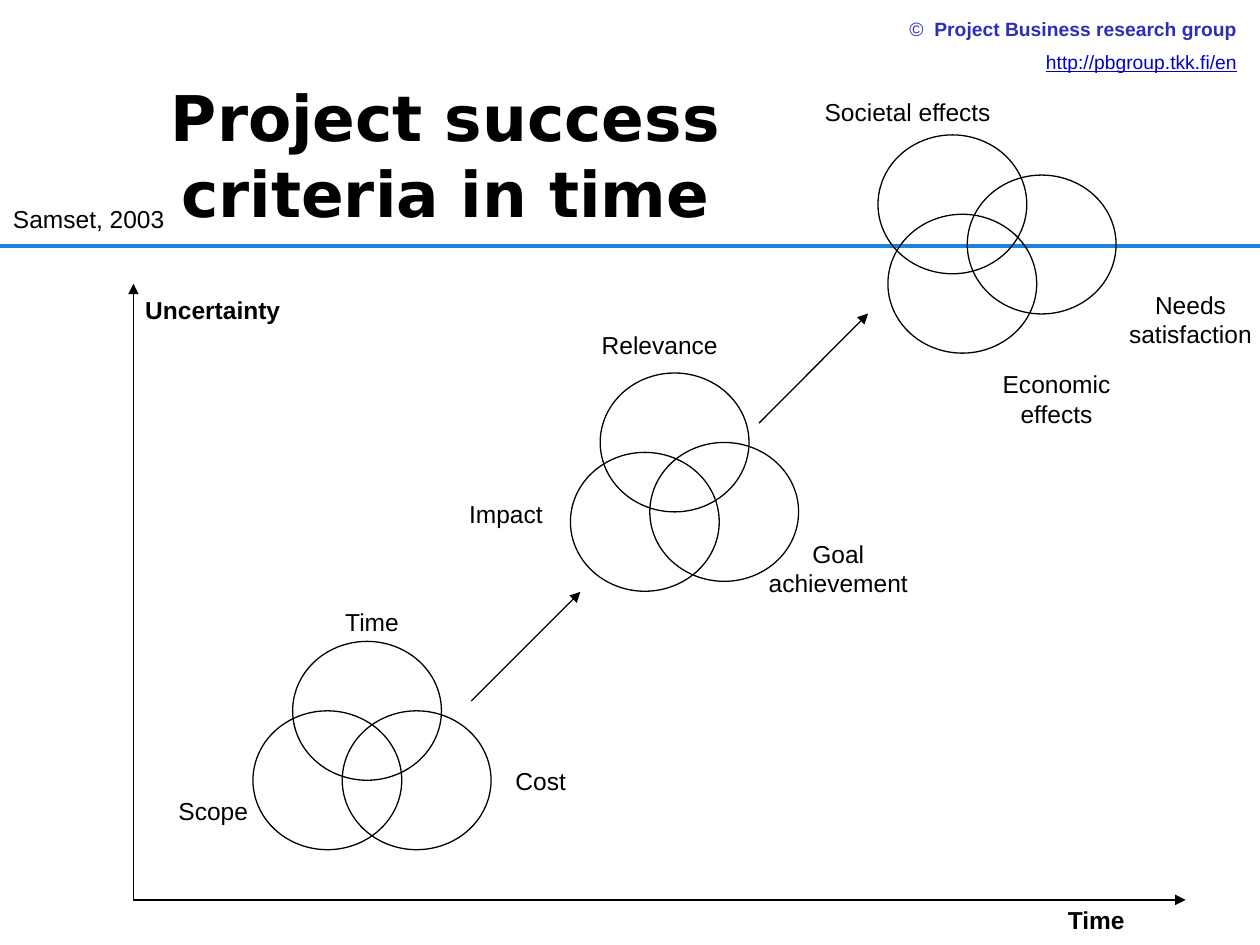
from dataclasses import dataclass

from lxml.etree import SubElement
from pptx import Presentation
from pptx.dml.color import RGBColor as RGB
from pptx.enum.shapes import MSO_CONNECTOR as CONN, MSO_SHAPE as SHAPE
from pptx.enum.text import MSO_ANCHOR as ANCHOR, MSO_AUTO_SIZE as FIT, PP_ALIGN as ALIGN
from pptx.oxml.ns import qn
from pptx.util import Cm, Pt


@dataclass(frozen=True)
class Theme:
    font: str = "Arial"
    title_font: str = "DejaVu Sans"
    ink: RGB = RGB(0x00, 0x00, 0x00)
    rule: RGB = RGB(0x1D, 0x82, 0xDD)
    credit: RGB = RGB(0x2D, 0x2D, 0xB9)
    link: RGB = RGB(0x00, 0x00, 0xCC)
    title_size: float = 36
    label_size: float = 14
    credit_size: float = 11
    thin: float = 0.75
    thick: float = 2.25


T = Theme()

# Content; all lengths in cm
SLIDE_W, SLIDE_H = 25.4, 19.05
TITLE = "Project success criteria in time"
TITLE_BOX = (1.68, 1.7, 14.6, 2.82)
CREDIT_BOX = (17.27, 0.23, 7.92, 1.42)
RULE_Y = 4.95

CIRCLE_W, CIRCLE_H = 3, 2.8
CLUSTERS = {  # left, top of each circle
    "project": [(5.1, 14.33), (5.9, 12.93), (6.9, 14.33)],
    "outcome": [(11.5, 9.12), (12.1, 7.52), (13.1, 8.92)],
    "society": [(17.7, 2.72), (17.9, 4.32), (19.5, 3.53)],
}

ORIGIN = (2.69, 18.14)
ARROWS = [  # start, end
    (ORIGIN, (2.69, 5.72)),
    (ORIGIN, (23.9, 18.14)),
    ((9.5, 14.13), (11.7, 11.93)),
    ((15.3, 8.53), (17.5, 6.32)),
]

LABEL_W, LINE_H, TALL_H = 4, 0.86, 1.8
LABELS = [  # text, left, top, width, height, bold
    ("Time", 20.9, 18.11, 2.4, LINE_H, True),
    ("Uncertainty", 2.39, 5.82, 3.8, LINE_H, True),
    ("Time", 5.5, 12.12, LABEL_W, LINE_H, False),
    ("Scope", 2.3, 15.93, LABEL_W, LINE_H, False),
    ("Cost", 8.9, 15.32, LABEL_W, LINE_H, False),
    ("Impact", 8.9, 9.93, 2.6, LINE_H, False),
    ("Relevance", 11.3, 6.53, LABEL_W, LINE_H, False),
    ("Goal achievement", 14.7, 10.74, 4.4, TALL_H, False),
    ("Economic effects", 19.3, 7.32, LABEL_W, TALL_H, False),
    ("Needs satisfaction", 22, 5.72, LABEL_W, TALL_H, False),
    ("Societal effects", 16.3, 1.83, LABEL_W, TALL_H, False),
    ("Samset, 2003", 0, 3.99, 3.58, LINE_H, False),
]


def add_run(p, text, size, color, font=T.font, bold=False, underline=False):
    r = p.add_run()
    r.text = text
    r.font.name, r.font.size, r.font.color.rgb = font, Pt(size), color
    r.font.bold, r.font.underline = bold, underline


def add_box(s, box):
    tf = s.shapes.add_textbox(*map(Cm, box)).text_frame
    tf.word_wrap = True
    tf.auto_size = FIT.SHAPE_TO_FIT_TEXT
    return tf


def add_line(s, start, end, color, width, arrow=False):
    sp = s.shapes.add_connector(CONN.STRAIGHT, *map(Cm, start + end))
    sp.line.color.rgb, sp.line.width = color, Pt(width)
    if arrow:
        SubElement(sp.line._get_or_add_ln(), qn("a:tailEnd"), type="triangle")
    SubElement(sp._element.spPr, qn("a:effectLst"))


def add_circle(s, left, top):
    sp = s.shapes.add_shape(SHAPE.OVAL, *map(Cm, (left, top, CIRCLE_W, CIRCLE_H)))
    sp.shadow.inherit = False
    sp.fill.background()
    sp.line.color.rgb, sp.line.width = T.ink, Pt(T.thin)


def main():
    prs = Presentation()
    prs.slide_width, prs.slide_height = Cm(SLIDE_W), Cm(SLIDE_H)
    s = prs.slides.add_slide(prs.slide_layouts[5])

    # Title
    sp = s.shapes.title
    sp.left, sp.top, sp.width, sp.height = map(Cm, TITLE_BOX)
    tf = sp.text_frame
    tf.word_wrap, tf.auto_size, tf.vertical_anchor = True, FIT.NONE, ANCHOR.MIDDLE
    p = tf.paragraphs[0]
    p.alignment = ALIGN.CENTER
    add_run(p, TITLE, T.title_size, T.ink, T.title_font, bold=True)

    # Header rule and copyright
    add_line(s, (0, RULE_Y), (SLIDE_W, RULE_Y), T.rule, T.thick)
    tf = add_box(s, CREDIT_BOX)
    p = tf.paragraphs[0]
    p.alignment = ALIGN.RIGHT
    add_run(p, "©  ", T.credit_size, T.credit)
    add_run(p, "Project Business research group", T.credit_size, T.credit, bold=True)
    p = tf.add_paragraph()
    p.alignment, p.space_before = ALIGN.RIGHT, Pt(T.credit_size / 2)
    add_run(p, "http://pbgroup.tkk.fi/en", T.credit_size, T.link, underline=True)

    # Circle clusters
    for circles in CLUSTERS.values():
        for left, top in circles:
            add_circle(s, left, top)

    # Axes and arrows between clusters
    for start, end in ARROWS:
        add_line(s, start, end, T.ink, T.thin, arrow=True)

    # Labels
    for text, *box, bold in LABELS:
        p = add_box(s, box).paragraphs[0]
        p.alignment = ALIGN.CENTER
        add_run(p, text, T.label_size, T.ink, bold=bold)

    prs.save("out.pptx")


if __name__ == "__main__":
    main()
